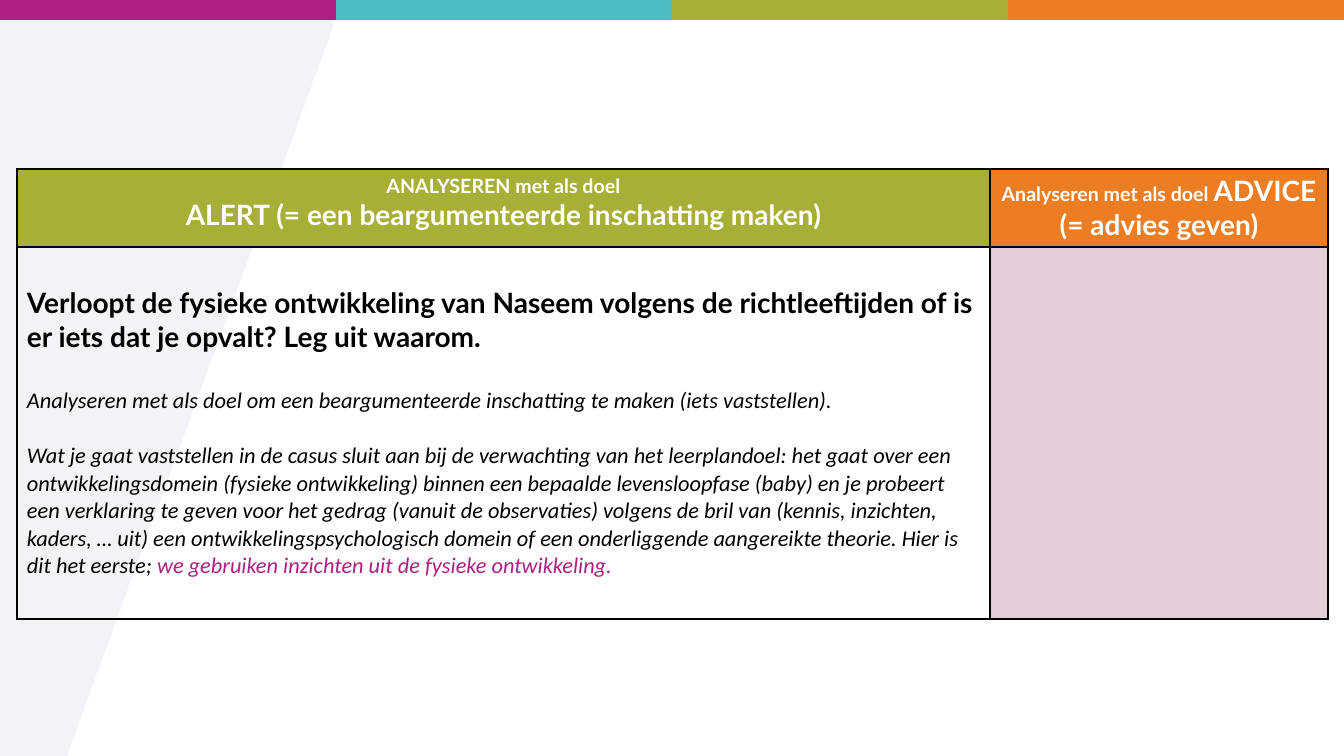
from dataclasses import dataclass

from pptx import Presentation
from pptx.dml.color import RGBColor
from pptx.enum.shapes import MSO_SHAPE
from pptx.enum.text import MSO_ANCHOR, PP_ALIGN
from pptx.oxml import parse_xml
from pptx.oxml.ns import nsdecls, qn
from pptx.util import Emu, Pt
from lxml.etree import SubElement


@dataclass(frozen=True)
class Theme:
    """Colours, fonts and type sizes of the slide."""
    purple: str = "AE2081"
    teal: str = "4CBCC5"
    green: str = "A8AF37"
    orange: str = "EC7D23"
    pink: str = "E3CDD8"
    wedge: str = "E8ECF0"
    white: str = "FFFFFF"
    black: str = "000000"
    heading_font: str = "Lato"
    body_font: str = "Calibri"
    small: int = 14
    body: int = 16
    large: int = 20


THEME = Theme()
WIDTH, HEIGHT = 1344, 756


def px(length):
    """Turn px into EMU."""
    return Emu(length * 12192000 // WIDTH)


def paint(shape, colour):
    """Give a shape a flat fill without line or shadow."""
    shape.shadow.inherit = False
    shape.fill.solid()
    shape.fill.fore_color.rgb = RGBColor.from_string(colour)
    shape.line.fill.background()


def add_wedge(page):
    """Draw the translucent slanted panel on the left."""
    outline = [(311, 5), (325, 9), (333, 18), (333, 26), (331, 33), (67, HEIGHT), (0, HEIGHT)]
    builder = page.shapes.build_freeform(0, px(5))
    builder.add_line_segments([(px(x), px(y)) for x, y in outline])
    wedge = builder.convert_to_shape()
    paint(wedge, THEME.wedge)
    colour = wedge.fill._xPr.find(qn("a:solidFill"))[0]
    SubElement(colour, qn("a:alpha")).set("val", "59000")


def add_colour_bar(page):
    """Draw four equal bands along the top edge."""
    band = WIDTH // 4
    for index, colour in enumerate((THEME.purple, THEME.teal, THEME.green, THEME.orange)):
        box = page.shapes.add_shape(
            MSO_SHAPE.RECTANGLE, px(index * band), 0, px(band), px(20))
        paint(box, colour)


def add_span(para, text, size, colour, font=THEME.heading_font, bold=True):
    """Add a run: bold upright or regular italic."""
    span = para.add_run()
    span.text = text
    span.font.name = font
    span.font.size = Pt(size)
    span.font.bold = bold
    span.font.italic = not bold
    span.font.color.rgb = RGBColor.from_string(colour)


def style_cell(cell, colour=None):
    """Set borders, margins and fill of a cell."""
    properties = cell._tc.get_or_add_tcPr()
    for side in ("lnL", "lnR", "lnT", "lnB"):
        properties.append(parse_xml(
            f'<a:{side} {nsdecls("a")} w="12700"><a:solidFill>'
            f'<a:srgbClr val="{THEME.black}"/></a:solidFill></a:{side}>'))
    cell.margin_left = cell.margin_right = px(10)
    cell.margin_top = cell.margin_bottom = px(5)
    cell.vertical_anchor = MSO_ANCHOR.TOP
    if colour:
        cell.fill.solid()
        cell.fill.fore_color.rgb = RGBColor.from_string(colour)
    else:
        cell.fill.background()


def fill_header(cell, small_text, large_text, break_line=False):
    """Write a centred heading in two sizes."""
    para = cell.text_frame.paragraphs[0]
    para.alignment = PP_ALIGN.CENTER
    add_span(para, small_text, THEME.small, THEME.white)
    if break_line:
        para.add_line_break()
    add_span(para, large_text, THEME.large, THEME.white)


def fill_question(cell):
    """Write the question and its explanation."""
    cell.margin_top = px(39)
    frame = cell.text_frame
    add_span(frame.paragraphs[0],
             "Verloopt de fysieke ontwikkeling van Naseem volgens de richtleeftijden "
             "of is er iets dat je opvalt? Leg uit waarom.", THEME.large, THEME.black)
    explanation = [
        (24, [("Analyseren met als doel om een beargumenteerde inschatting te maken "
               "(iets vaststellen).", THEME.black)]),
        (20, [("Wat je gaat vaststellen in de casus sluit aan bij de verwachting van het "
               "leerplandoel: het gaat over een ontwikkelingsdomein (fysieke ontwikkeling) "
               "binnen een bepaalde levensloopfase (baby) en je probeert een verklaring te "
               "geven voor het gedrag (vanuit de observaties) volgens de bril van (kennis, "
               "inzichten, kaders, … uit) een ontwikkelingspsychologisch domein of een "
               "onderliggende aangereikte theorie. Hier is dit het eerste; ", THEME.black),
              ("we gebruiken inzichten uit de fysieke ontwikkeling.", THEME.purple)]),
    ]
    for gap, spans in explanation:
        para = frame.add_paragraph()
        para.space_before = Pt(gap)
        for text, colour in spans:
            add_span(para, text, THEME.body, colour, THEME.body_font, bold=False)


def add_goal_table(page):
    """Add the table with both goals of the analysis."""
    columns, rows = (973, 338), (78, 372)
    table = page.shapes.add_table(
        2, 2, px(17), px(169), px(sum(columns)), px(sum(rows))).table
    table.horz_banding = False
    for column, width in zip(table.columns, columns):
        column.width = px(width)
    for row, height in zip(table.rows, rows):
        row.height = px(height)
    for cell, colour in zip(table.iter_cells(), (THEME.green, THEME.orange, None, THEME.pink)):
        style_cell(cell, colour)
    fill_header(table.cell(0, 0), "ANALYSEREN met als doel",
                "ALERT (= een beargumenteerde inschatting maken)", break_line=True)
    fill_header(table.cell(0, 1), "Analyseren met als doel ", "ADVICE (= advies geven)")
    fill_question(table.cell(1, 0))


def main():
    """Build and save the slide."""
    deck = Presentation()
    deck.slide_width, deck.slide_height = px(WIDTH), px(HEIGHT)
    page = deck.slides.add_slide(deck.slide_layouts[6])
    add_wedge(page)
    add_colour_bar(page)
    add_goal_table(page)
    deck.save("out.pptx")


if __name__ == "__main__":
    main()
